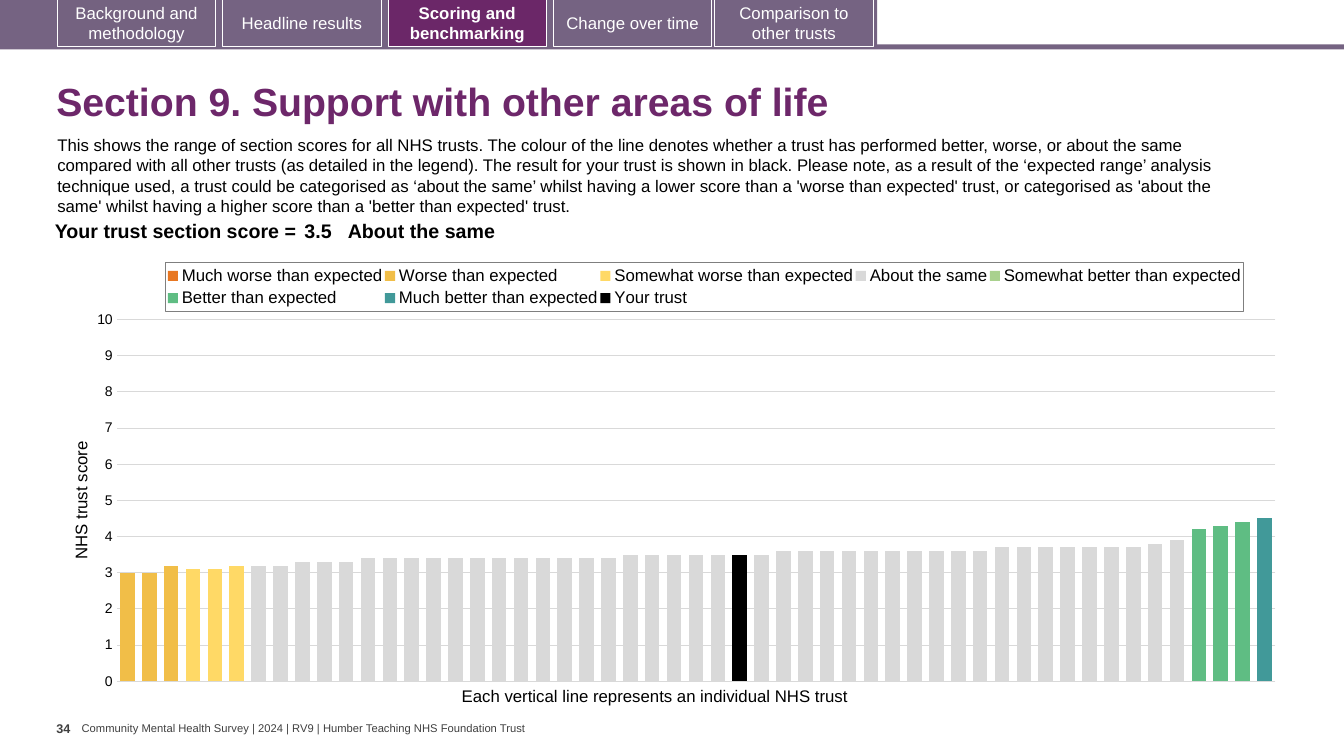
from copy import deepcopy
from pptx import Presentation
from pptx.chart.data import CategoryChartData as Data
from pptx.dml.color import RGBColor
from pptx.enum.chart import XL_CHART_TYPE as Kind, XL_LEGEND_POSITION as Pos, XL_TICK_MARK as Tick
from pptx.enum.shapes import MSO_SHAPE as Shape
from pptx.enum.text import MSO_ANCHOR as Anchor, PP_ALIGN as Align
from pptx.oxml import parse_xml
from pptx.oxml.ns import nsdecls, qn
from pptx.util import Inches, Pt

TABS = [
    (0.57, "Background and methodology", "746280"),
    (2.21, "Headline results", "756382"),
    (3.85, "Scoring and benchmarking", "6B2768"),
    (5.49, "Change over time", "756382"),
    (7.09, "Comparison to other trusts", "756382"),
]
ACTIVE = "Scoring and benchmarking"
INTRO = (
    "This shows the range of section scores for all NHS trusts. The colour of the line denotes "
    "whether a trust has performed better, worse, or about the same compared with all other trusts "
    "(as detailed in the legend). The result for your trust is shown in black. Please note, as a "
    "result of the ‘expected range’ analysis technique used, a trust could be categorised as "
    "‘about the same’ whilst having a lower score than a 'worse than expected' trust, or categorised "
    "as 'about the same' whilst having a higher score than a 'better than expected' trust."
)
COUNT = 53
SAME = ([3.2] * 2 + [3.3] * 3 + [3.4] * 12 + [3.5] * 7
        + [3.6] * 10 + [3.7] * 7 + [3.8, 3.9])
BANDS = [
    ("Much worse than expected", "E87722", 0, []),
    ("Worse than expected", "F1BE48", 0, [3, 3, 3.2]),
    ("Somewhat worse than expected", "FFD966", 3, [3.1, 3.1, 3.2]),
    ("About the same", "D9D9D9", 6, SAME),
    ("Somewhat better than expected", "A9D18E", 49, []),
    ("Better than expected", "5FBD83", 49, [4.2, 4.3, 4.4]),
    ("Much better than expected", "419999", 52, [4.5]),
    ("Your trust", "000000", 28, [3.5]),
]


def rgb(code):
    """Turn a hex string into a colour."""
    return RGBColor.from_string(code)


def apply(item, vals):
    """Set each named value on an item."""
    for key, val in vals.items():
        setattr(item, key, val)


def style(font, size, code="000000", bold=False):
    """Format a font in Arial."""
    apply(font, {"name": "Arial", "size": Pt(size), "bold": bold})
    font.color.rgb = rgb(code)


def write(frame, text, size, code="000000", bold=False, align=Align.LEFT, pad=(0.1, 0.05),
          anchor=Anchor.TOP):
    """Fill a text frame with one formatted paragraph."""
    side, top = map(Inches, pad)
    apply(frame, {"word_wrap": True, "vertical_anchor": anchor, "margin_left": side,
                  "margin_right": side, "margin_top": top, "margin_bottom": top})
    para = frame.paragraphs[0]
    para.alignment = align
    run = para.add_run()
    run.text = text
    style(run.font, size, code, bold)
    return para


def label(slide, box, text, size, **form):
    """Add a text box and return its paragraph."""
    area = slide.shapes.add_textbox(*map(Inches, box))
    return write(area.text_frame, text, size, **form)


def block(slide, box, code):
    """Add a plain filled rectangle."""
    rect = slide.shapes.add_shape(Shape.RECTANGLE, *map(Inches, box))
    rect.shadow.inherit = False
    rect.fill.solid()
    rect.fill.fore_color.rgb = rgb(code)
    rect.line.fill.background()
    return rect


def banner(slide, box):
    """Draw the navigation tabs along the top."""
    x, y, w, h = box
    block(slide, (x, y + h - 0.05, w, 0.05), "756382")
    block(slide, (x, y, 8.7, h - 0.02), "756382")
    for left, text, code in TABS:
        tab = block(slide, (x + left, y - 0.01, 1.57, 0.47), code)
        tab.line.color.rgb = rgb("FFFFFF")
        tab.line.width = Pt(0.75)
        write(tab.text_frame, text, 12, "FFFFFF", text == ACTIVE, Align.CENTER,
              anchor=Anchor.MIDDLE)


def heading(slide, box):
    """Place the title and the introduction."""
    x, y, w, h = box
    title = label(slide, (x, y, w, 0.72), "Section 9. Support with other areas of life", 28,
                  code="6D276A", bold=True, anchor=Anchor.MIDDLE)
    title.line_spacing = 0.9
    label(slide, (x + 0.01, y + 0.62, 12.13, h - 0.62), INTRO, 12)


def score(slide, box):
    """Place the score row as a table."""
    table = slide.shapes.add_table(1, 3, *map(Inches, box)).table
    apply(table, {"first_row": False, "horz_banding": False})
    cells = [
        (2.63, "Your trust section score =", Align.RIGHT, 0.04),
        (0.47, "3.5", Align.LEFT, 0.04),
        (box[2] - 3.1, "About the same", Align.LEFT, 0),
    ]
    for col, (wide, text, align, side) in enumerate(cells):
        table.columns[col].width = Inches(wide)
        cell = table.cell(0, col)
        cell.fill.background()
        apply(cell, {"margin_left": Inches(side), "margin_right": Inches(side),
                     "margin_top": Inches(0.04), "margin_bottom": Inches(0.04)})
        para = cell.text_frame.paragraphs[0]
        para.alignment = align
        run = para.add_run()
        run.text = text
        style(run.font, 14, bold=True)


def layout(x, y, w, h, inner=False):
    """Build a manual layout from chart fractions."""
    target = '<c:layoutTarget val="inner"/>' if inner else ""
    sizes = "".join(f'<c:{k} val="{v}"/>' for k, v in zip("xywh", (x, y, w, h)))
    return parse_xml(f'<c:layout {nsdecls("c")}><c:manualLayout>{target}<c:xMode val="edge"/>'
                     f'<c:yMode val="edge"/>{sizes}</c:manualLayout></c:layout>')


def arrange(node, plan):
    """Put a manual layout in a chart part."""
    for old in node.findall(qn("c:layout")):
        node.remove(old)
    spot = node.find(qn("c:legendPos"))
    node.insert(0 if spot is None else node.index(spot) + 1, plan)


def split(plot):
    """Move the last series to a hidden second axis."""
    bars, cat, val = (plot.find(qn(f"c:{tag}")) for tag in ("barChart", "catAx", "valAx"))
    twin, base, side = map(deepcopy, (bars, cat, val))
    for ser in twin.findall(qn("c:ser"))[:-1]:
        twin.remove(ser)
    bars.remove(bars.findall(qn("c:ser"))[-1])
    for node, ids in ((base, ("11", "12")), (side, ("12", "11"))):
        for tag, num in zip(("axId", "crossAx"), ids):
            node.find(qn(f"c:{tag}")).set("val", num)
    for node, num in zip(twin.findall(qn("c:axId")), ("11", "12")):
        node.set("val", num)
    for tag in ("majorGridlines", "title"):
        side.remove(side.find(qn(f"c:{tag}")))
    for tag, mode in (("axPos", "r"), ("tickLblPos", "none"), ("majorTickMark", "out"),
                      ("crosses", "max")):
        side.find(qn(f"c:{tag}")).set("val", mode)
    bars.addnext(twin)
    val.addnext(side)
    side.addnext(base)


def graph(slide, box):
    """Draw the chart of trust scores with its caption."""
    x, y, w, h = box
    data = Data()
    data.categories = [str(n + 1) for n in range(COUNT)]
    for name, _, start, vals in BANDS:
        data.add_series(name, [None] * start + vals + [None] * (COUNT - start - len(vals)))
    chart = slide.shapes.add_chart(Kind.COLUMN_CLUSTERED, *map(Inches, box), data).chart
    apply(chart, {"has_title": False, "has_legend": True})
    style(chart.font, 10)
    apply(chart.plots[0], {"gap_width": 50, "overlap": 100, "vary_by_categories": False})
    for ser, (_, code, _, _) in zip(chart.series, BANDS):
        ser.format.fill.solid()
        ser.format.fill.fore_color.rgb = rgb(code)

    chart.category_axis.visible = False
    axis = chart.value_axis
    apply(axis, {"minimum_scale": 0, "maximum_scale": 10, "major_unit": 1,
                 "has_major_gridlines": True, "major_tick_mark": Tick.NONE})
    apply(axis.tick_labels, {"number_format": "0", "number_format_is_linked": False})
    style(axis.tick_labels.font, 10)
    axis.format.line.fill.background()
    grid = axis.major_gridlines.format.line
    grid.color.rgb = rgb("D9D9D9")
    grid.width = Pt(0.75)
    run = axis.axis_title.text_frame.paragraphs[0].add_run()
    run.text = "NHS trust score"
    style(run.font, 12)

    legend = chart.legend
    apply(legend, {"position": Pos.TOP, "include_in_layout": False})
    style(legend.font, 12)
    key = legend.font._element if hasattr(legend.font, "_element") else None
    root = chart.element.find(qn("c:chart"))
    key = root.find(qn("c:legend"))
    arrange(key, layout(0.08, 0.03, 0.88, 0.11))
    key.find(qn("c:txPr")).addprevious(parse_xml(
        f'<c:spPr {nsdecls("c", "a")}><a:ln w="9525"><a:solidFill><a:srgbClr val="7F7F7F"/>'
        '</a:solidFill></a:ln></c:spPr>'))
    plot = root.find(qn("c:plotArea"))
    arrange(plot, layout(0.04, 0.158, 0.946, 0.808, True))
    split(plot)
    label(slide, (x + 3.81, y + h - 0.16, 4.11, 0.3),
          "Each vertical line represents an individual NHS trust", 12)


def footer(slide, box):
    """Place the page number and the survey name."""
    x, y, w, h = box
    label(slide, (x, y, 0.25, h), "34", 9, code="404040", bold=True, pad=(0, 0.05))
    label(slide, (x + 0.25, y + 0.06, w - 0.25, 0.13),
          "Community Mental Health Survey | 2024 | RV9 | Humber Teaching NHS Foundation Trust",
          8, code="404040", pad=(0, 0), anchor=Anchor.MIDDLE)


def main():
    """Build and save the slide."""
    deck = Presentation()
    apply(deck, {"slide_width": Inches(13.33), "slide_height": Inches(7.5)})
    slide = deck.slides.add_slide(deck.slide_layouts[6])
    banner(slide, (0, 0, 13.33, 0.49))
    heading(slide, (0.46, 0.67, 12.49, 1.53))
    graph(slide, (0.67, 2.47, 12.15, 4.44))
    score(slide, (0.35, 2.15, 11.69, 0.31))
    footer(slide, (0.56, 7.1, 4.9, 0.4))
    deck.save("out.pptx")


if __name__ == "__main__":
    main()
